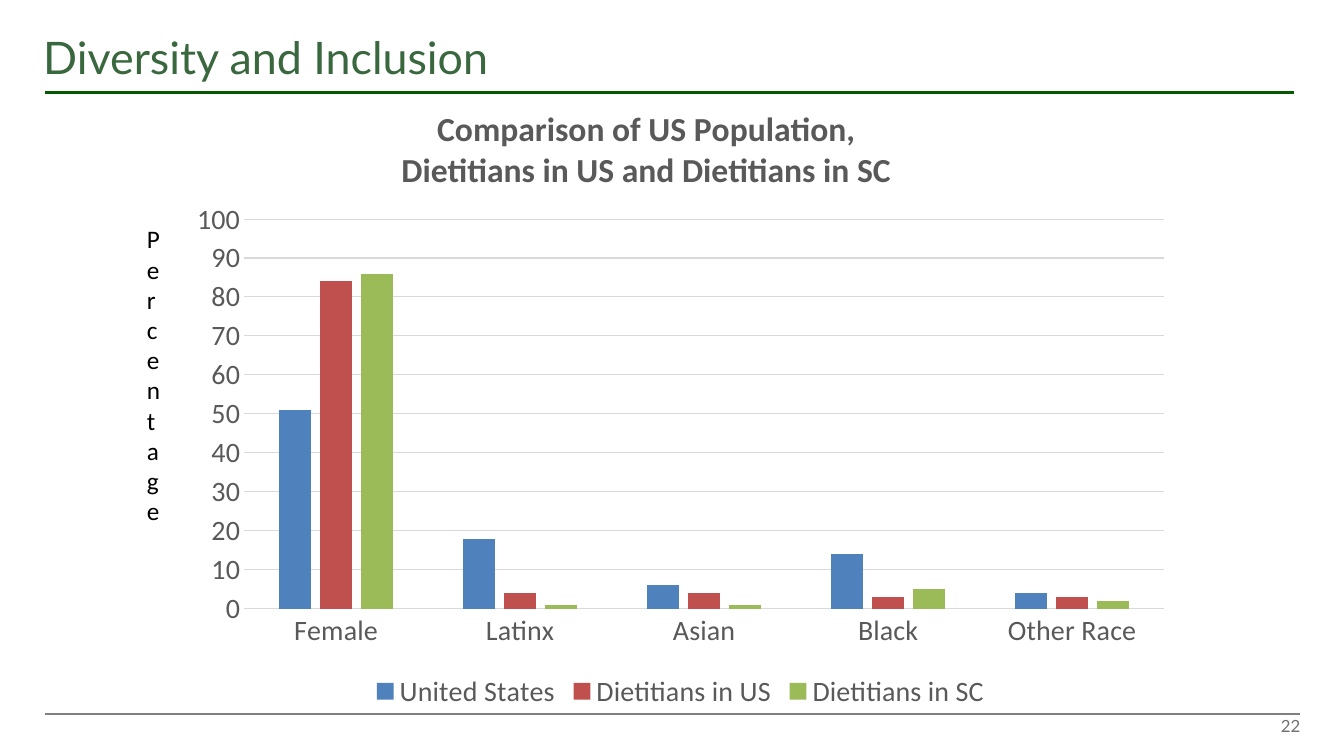
from lxml.etree import SubElement
from pptx import Presentation
from pptx.chart.data import CategoryChartData
from pptx.dml.color import RGBColor
from pptx.enum.chart import XL_CHART_TYPE as ChartType
from pptx.enum.chart import XL_LEGEND_POSITION as LegendPosition
from pptx.enum.chart import XL_TICK_MARK as TickMark
from pptx.enum.shapes import MSO_CONNECTOR as Connector
from pptx.enum.text import MSO_ANCHOR as Anchor
from pptx.enum.text import MSO_AUTO_SIZE as AutoSize
from pptx.enum.text import PP_ALIGN as Align
from pptx.oxml.ns import qn
from pptx.util import Cm, Pt

BLACK = RGBColor(0x00, 0x00, 0x00)
TITLE_GREEN = RGBColor(0x39, 0x68, 0x3E)
RULE_GREEN = RGBColor(0x06, 0x59, 0x01)
RULE_GREY = RGBColor(0x80, 0x80, 0x80)
NUMBER_GREY = RGBColor(0x71, 0x71, 0x71)
CHART_GREY = RGBColor(0x59, 0x59, 0x59)
GRID_GREY = RGBColor(0xD9, 0xD9, 0xD9)
BLUE = RGBColor(0x4F, 0x81, 0xBD)
RED = RGBColor(0xC0, 0x50, 0x4D)
GREEN = RGBColor(0x9B, 0xBB, 0x59)

GROUPS = ["Female", "Latinx", "Asian", "Black", "Other Race"]
SERIES = [
    ("United States", [51, 18, 6, 14, 4], BLUE),
    ("Dietitians in US", [84, 4, 4, 3, 3], RED),
    ("Dietitians in SC", [86, 1, 1, 5, 2], GREEN),
]
CHART_TITLE = ["Comparison of US Population,", "Dietitians in US and Dietitians in SC"]


def set_values(target, values):
    for name, value in values.items():
        setattr(target, name, value)


def set_font(font, color, **values):
    set_values(font, values)
    font.color.rgb = color


def set_line(line, color, width):
    line.color.rgb = color
    line.width = Pt(width)


def place(element, **fractions):
    """Give a chart part a fixed place, in fractions of the chart's size."""
    layout = element.find(qn("c:layout"))
    if layout is None:
        layout = element.makeelement(qn("c:layout"))
        element.insert(0, layout)
    manual = SubElement(layout, qn("c:manualLayout"))
    if "w" in fractions:
        SubElement(manual, qn("c:layoutTarget")).set("val", "inner")
    for side in ("xMode", "yMode"):
        SubElement(manual, qn(f"c:{side}")).set("val", "edge")
    for name, value in fractions.items():
        SubElement(manual, qn(f"c:{name}")).set("val", str(value))


class SlideBuilder:
    heading_font = "Lato"
    body_font = "Calibri"

    def __init__(self, presentation):
        self.slide = presentation.slides.add_slide(presentation.slide_layouts[6])

    def rule(self, left, right, y, color, width):
        line = self.slide.shapes.add_connector(
            Connector.STRAIGHT, Cm(left), Cm(y), Cm(right), Cm(y))
        set_line(line.line, color, width)
        SubElement(line._element.spPr, qn("a:effectLst"))

    def text(self, text, box, color, size, font_name, align=Align.LEFT, **frame_values):
        frame = self.slide.shapes.add_textbox(*map(Cm, box)).text_frame
        set_values(frame, {"word_wrap": True, **frame_values})
        paragraph = frame.paragraphs[0]
        paragraph.alignment = align
        run = paragraph.add_run()
        run.text = text
        set_font(run.font, color, name=font_name, size=Pt(size))
        return frame

    def stacked_text(self, text, box, color, size):
        """Write upright letters one below the other."""
        frame = self.text(text, box, color, size, self.body_font,
                          word_wrap=False, auto_size=AutoSize.SHAPE_TO_FIT_TEXT)
        frame._txBody.bodyPr.set("vert", "wordArtVert")

    def column_chart(self, box, title_lines, categories, series):
        data = CategoryChartData()
        data.categories = categories
        for name, values, _ in series:
            data.add_series(name, values)
        chart = self.slide.shapes.add_chart(
            ChartType.COLUMN_CLUSTERED, *map(Cm, box), data).chart
        set_font(chart.font, BLACK, name=self.body_font, size=Pt(10))

        plot = chart.plots[0]
        set_values(plot, {"gap_width": 219, "overlap": -27, "vary_by_categories": False})
        for column, (_, _, color) in zip(plot.series, series):
            column.format.fill.solid()
            column.format.fill.fore_color.rgb = color

        self.chart_title(chart, title_lines)
        self.axes(chart)
        chart.has_legend = True
        set_values(chart.legend, {"position": LegendPosition.BOTTOM,
                                  "include_in_layout": False})
        set_font(chart.legend.font, CHART_GREY, name=self.body_font, size=Pt(20))
        place(chart._chartSpace.chart.plotArea, x=0.067, y=0.22, w=0.913, h=0.614)

    def chart_title(self, chart, lines):
        chart.has_title = True
        frame = chart.chart_title.text_frame
        for index, line in enumerate(lines):
            paragraph = frame.add_paragraph() if index else frame.paragraphs[0]
            paragraph.alignment = Align.CENTER
            run = paragraph.add_run()
            run.text = line
            set_font(run.font, CHART_GREY, name=self.body_font, size=Pt(24), bold=True)
        place(chart.chart_title._element, x=0.22, y=0.04)

    def axes(self, chart):
        for axis in (chart.category_axis, chart.value_axis):
            set_values(axis, {"major_tick_mark": TickMark.NONE,
                              "minor_tick_mark": TickMark.NONE})
            set_font(axis.tick_labels.font, CHART_GREY, name=self.body_font, size=Pt(20))
        set_line(chart.category_axis.format.line, GRID_GREY, 0.75)
        set_values(chart.value_axis, {"minimum_scale": 0, "maximum_scale": 100,
                                      "major_unit": 10})
        chart.value_axis.format.line.fill.background()
        set_line(chart.value_axis.major_gridlines.format.line, GRID_GREY, 0.75)


def main():
    presentation = Presentation()
    set_values(presentation, {"slide_width": Cm(33.87), "slide_height": Cm(19.05)})
    builder = SlideBuilder(presentation)
    builder.rule(1.13, 32.75, 17.99, RULE_GREY, 1)
    builder.rule(1.13, 32.62, 2.34, RULE_GREEN, 2.25)
    builder.text("22", (25.12, 17.98, 7.9, 0.64), NUMBER_GREY, 12, builder.heading_font,
                 Align.RIGHT, vertical_anchor=Anchor.MIDDLE)
    builder.text("Diversity and Inclusion", (0.84, 0.64, 17.15, 1.57), TITLE_GREEN, 32,
                 builder.heading_font, vertical_anchor=Anchor.MIDDLE)
    builder.column_chart((4.45, 2, 25.4, 16), CHART_TITLE, GROUPS, SERIES)
    builder.stacked_text("Percentage", (3.45, 5.51, 1.42, 9.35), BLACK, 18)
    presentation.save("out.pptx")


if __name__ == "__main__":
    main()
